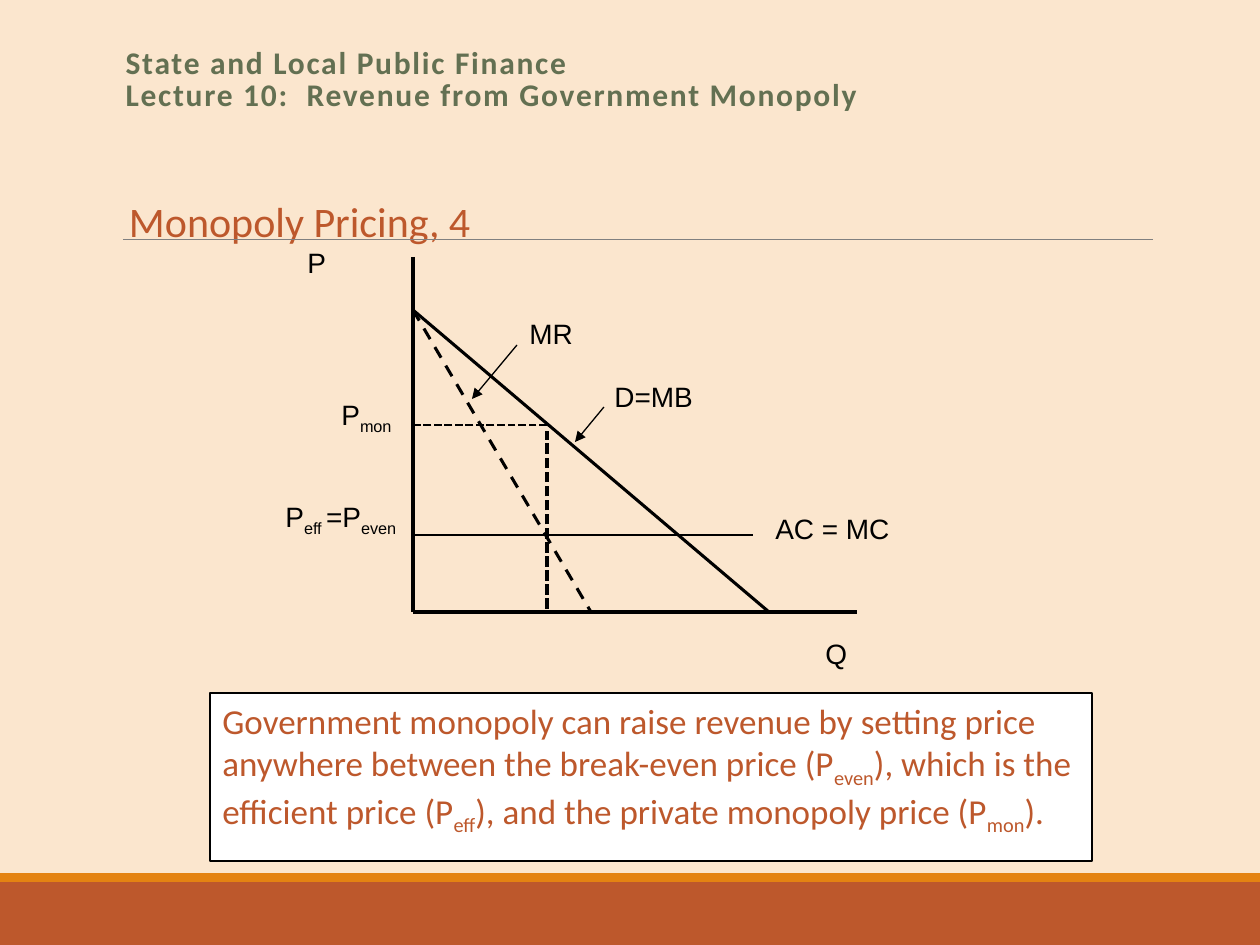
from lxml import etree
from pptx import Presentation
from pptx import util as u
from pptx.dml.color import RGBColor
from pptx.enum import dml, shapes, text
from pptx.oxml import ns

PX = 914400 / 126
INK, RUST, ORANGE, GREEN = "000000", "BD582C", "E48312", "637052"
CREAM, WHITE, GREY = "FBE6CE", "FFFFFF", "808080"
DASH = dml.MSO_LINE.DASH
DOT = dml.MSO_LINE.SQUARE_DOT

# Key points of the diagram
AXIS_X, AXIS_Y = 413, 612
CHOKE_Y = 310
MON_Q, MON_P = 547, 425
COST_Y = 535


def px(*lengths):
    return [u.Emu(round(n * PX)) for n in lengths]


def rgb(code):
    return RGBColor.from_string(code)


def add_run(paragraph, words, font, size, color):
    run = paragraph.add_run()
    run.text = words
    run.font.name, run.font.size = font, u.Pt(size)
    run.font.color.rgb = rgb(color)
    return run


def add_runs(paragraph, parts, font, size, color):
    """Add the parts in turn as normal text and subscript."""
    for i, words in enumerate(parts):
        run = add_run(paragraph, words, font, size, color)
        if i % 2:
            run.font._element.set("baseline", "-25000")


def place(shape, box):
    shape.left, shape.top, shape.width, shape.height = px(*box)
    frame = shape.text_frame
    frame.word_wrap = True
    frame.auto_size = text.MSO_AUTO_SIZE.NONE
    frame.vertical_anchor = text.MSO_ANCHOR.TOP
    paragraph = frame.paragraphs[0]
    paragraph.alignment = text.PP_ALIGN.LEFT
    return frame, paragraph


def add_rect(slide, box, fill, outline=None):
    rect = slide.shapes.add_shape(shapes.MSO_SHAPE.RECTANGLE, *px(*box))
    rect.shadow.inherit = False
    rect.fill.solid()
    rect.fill.fore_color.rgb = rgb(fill)
    if outline:
        rect.line.color.rgb = rgb(outline)
        rect.line.width = u.Pt(0.75)
    else:
        rect.line.fill.background()
    return rect


def add_line(slide, ends, width, color=INK, dash=None, arrow=False):
    line = slide.shapes.add_connector(shapes.MSO_CONNECTOR.STRAIGHT, *px(*ends))
    line.line.color.rgb = rgb(color)
    line.line.width = u.Pt(width)
    if dash:
        line.line.dash_style = dash
    if arrow:
        tail = etree.SubElement(line.line._get_or_add_ln(), ns.qn("a:tailEnd"))
        tail.set("type", "triangle")
    etree.SubElement(line._element.spPr, ns.qn("a:effectLst"))


def add_label(slide, box, *parts):
    label = slide.shapes.add_textbox(*px(*box))
    add_runs(place(label, box)[1], parts, "Arial", 16, INK)


def add_title(slide):
    paragraph = place(slide.shapes.title, (113, 42, 1040, 82))[1]
    paragraph.line_spacing = 0.85
    lines = ("State and Local Public Finance",
             "Lecture 10:  Revenue from Government Monopoly")
    for i, words in enumerate(lines):
        if i:
            paragraph.add_line_break()
        run = add_run(paragraph, words, "Calibri", 18, GREEN)
        run.font.bold = True
        run.font._element.set("spc", "100")


def add_topic(slide):
    frame, paragraph = place(slide.placeholders[1], (129, 199, 638, 55))
    frame.margin_left = frame.margin_right = 0
    paragraph.line_spacing = 0.8
    paragraph.space_before, paragraph.space_after = u.Pt(6.8), u.Pt(1.1)
    props = paragraph._p.get_or_add_pPr()
    indent = px(8)[0]
    props.set("marL", str(indent))
    props.set("indent", str(-indent))
    etree.SubElement(props, ns.qn("a:buNone"))
    add_run(paragraph, "Monopoly Pricing, 4", "Calibri", 24, RUST)


def add_diagram(slide):
    add_line(slide, (AXIS_X, 257, AXIS_X, AXIS_Y), 2)
    add_line(slide, (AXIS_X, AXIS_Y, 857, AXIS_Y), 2)
    add_line(slide, (AXIS_X, CHOKE_Y, 769, AXIS_Y), 1.75)
    add_line(slide, (AXIS_X, CHOKE_Y, 591, AXIS_Y), 1.75, dash=DASH)
    add_line(slide, (MON_Q, 609, MON_Q, 431), 2, dash=DOT)
    add_line(slide, (MON_Q, MON_P, AXIS_X, MON_P), 1.5, dash=DOT)
    add_line(slide, (AXIS_X, COST_Y, 753, COST_Y), 0.75)
    add_line(slide, (517, 345, 472, 399), 0.75, arrow=True)
    add_line(slide, (604, 407, 575, 442), 0.75, arrow=True)

    add_label(slide, (295, 239, 44, 71), "P")
    add_label(slide, (813, 630, 44, 71), "Q")
    add_label(slide, (763, 505, 168, 53), "AC = MC")
    add_label(slide, (517, 310, 103, 53), "MR")
    add_label(slide, (602, 373, 147, 53), "D=MB")
    add_label(slide, (273, 493, 145, 120), "P", "eff ", "=P", "even")
    add_label(slide, (329, 391, 118, 54), "P", "mon")


def add_conclusion(slide):
    box = (210, 693, 882, 168)
    paragraph = place(add_rect(slide, box, WHITE, INK), box)[1]
    parts = ("Government monopoly can raise revenue by setting price anywhere "
             "between the break-even price (P", "even",
             "), which is the efficient price (P", "eff",
             "), and the private monopoly price (P", "mon", ").")
    add_runs(paragraph, parts, "Calibri", 20, RUST)


def main():
    deck = Presentation()
    deck.slide_width, deck.slide_height = px(1260, 945)
    slide = deck.slides.add_slide(deck.slide_layouts[1])
    slide.background.fill.solid()
    slide.background.fill.fore_color.rgb = rgb(CREAM)
    add_rect(slide, (0, 882, 1260, 63), RUST)
    add_rect(slide, (0, 873, 1260, 9), ORANGE)
    add_line(slide, (123, 239, 1153, 239), 0.5, GREY)
    add_title(slide)
    add_topic(slide)
    add_conclusion(slide)
    add_diagram(slide)
    deck.save("out.pptx")


if __name__ == "__main__":
    main()
